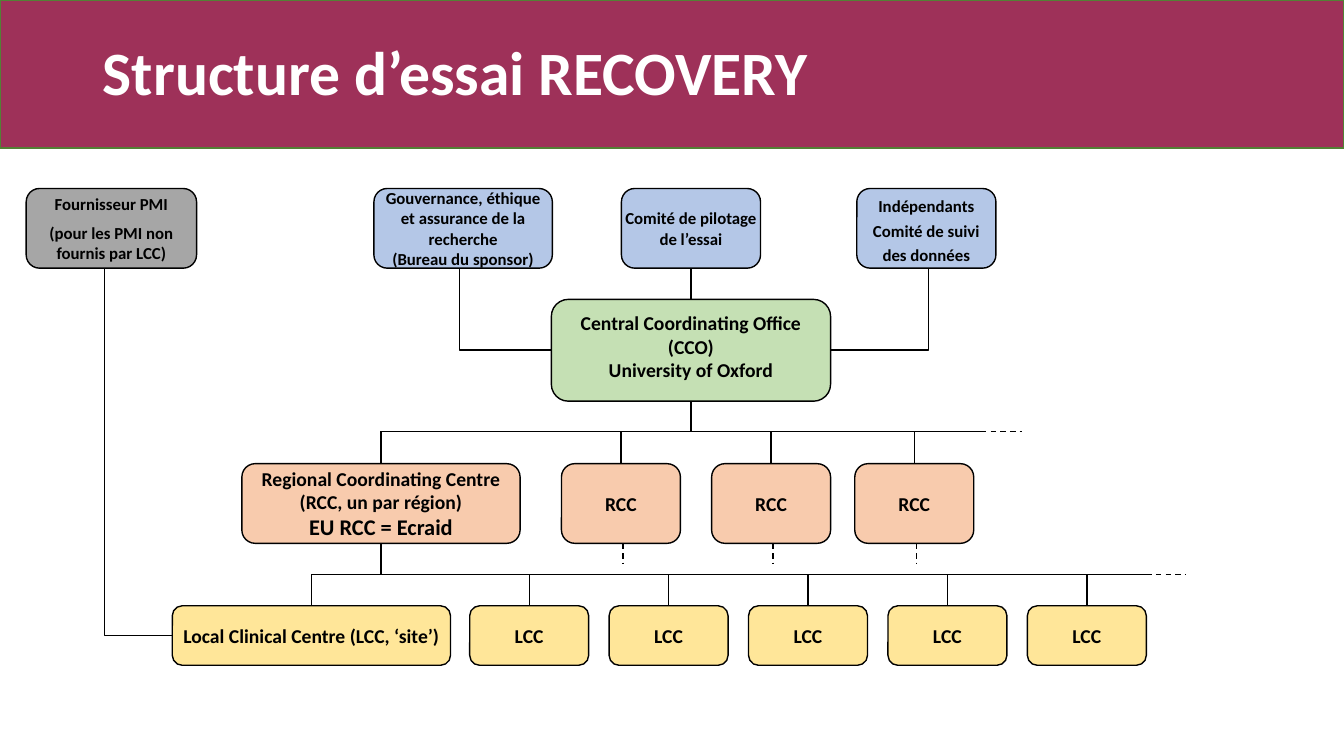
from lxml.etree import SubElement
from pptx import Presentation
from pptx.dml.color import RGBColor
from pptx.enum.dml import MSO_LINE
from pptx.enum.shapes import MSO_CONNECTOR as CONNECTOR, MSO_SHAPE as SHAPE
from pptx.enum.text import MSO_ANCHOR as ANCHOR, PP_ALIGN as ALIGN
from pptx.oxml.ns import qn
from pptx.util import Inches, Pt

COLORS = {name: RGBColor.from_string(value) for name, value in {
    "band": "9E3159", "band_edge": "538035", "committee": "B4C7E7",
    "central": "C5E0B4", "regional": "F8CBAD", "local": "FFE699",
    "supplier": "A6A6A6", "ink": "000000", "title": "FFFFFF",
}.items()}
FONT = "Calibri"
COLS, ROWS = 133.33, 75  # grid cells of a tenth of an inch


def cells(*counts):
    return [Inches(count / 10) for count in counts]


def style_text(paragraph, size, color):
    for run in paragraph.runs:
        run.font.name, run.font.size, run.font.bold = FONT, Pt(size), True
        run.font.color.rgb = COLORS[color]


def add_panel(slide, box, preset, fill, edge):
    panel = slide.shapes.add_shape(preset, *cells(*box))
    panel.shadow.inherit = False
    panel.fill.solid()
    panel.fill.fore_color.rgb = COLORS[fill]
    panel.line.color.rgb = COLORS[edge]
    panel.line.width = Pt(1)
    return panel


def add_unit(slide, box, fill, text, size):
    """Rounded box for one organisational unit; returns its text frame."""
    frame = add_panel(slide, box, SHAPE.ROUNDED_RECTANGLE, fill, "ink").text_frame
    frame.margin_left = frame.margin_right = frame.margin_top = frame.margin_bottom = 0
    frame.word_wrap = True
    frame.vertical_anchor = ANCHOR.MIDDLE
    frame.text = text
    for paragraph in frame.paragraphs:
        paragraph.alignment = ALIGN.CENTER
        style_text(paragraph, size, "ink")
    return frame


def add_link(slide, start, end, dashed=False, elbow=False):
    """Straight link, or an elbow that leaves its start horizontally."""
    link = slide.shapes.add_connector(
        CONNECTOR.ELBOW if elbow else CONNECTOR.STRAIGHT, *cells(*start, *end))
    properties = link.element.spPr
    if elbow:
        properties.find(qn("a:prstGeom")).set("prst", "bentConnector2")
    link.line.color.rgb = COLORS["ink"]
    link.line.width = Pt(1)
    if dashed:
        link.line.dash_style = MSO_LINE.DASH
    SubElement(properties, qn("a:effectLst"))


def add_header(slide, box):
    left, top, width, height = box
    band = add_panel(slide, box, SHAPE.RECTANGLE, "band", "band_edge")
    slide.shapes.element.insert(2, band.element)  # behind the title
    title = slide.shapes.title
    title.left, title.top, title.width, title.height = cells(
        left + 9.2, top + 0.2, width - 18.33, height - 0.2)
    frame = title.text_frame
    frame.text = "Structure d’essai RECOVERY"
    frame.vertical_anchor = ANCHOR.MIDDLE
    heading = frame.paragraphs[0]
    heading.alignment = ALIGN.LEFT
    heading.line_spacing = 0.9
    style_text(heading, 44, "title")


def add_oversight(slide, box, office):
    """Committees along the top of the box, linked to the central office."""
    left, top, width, height = box
    office_left, office_top, office_width, office_height = office
    middle = office_top + office_height / 2
    bottom = top + height
    governance, steering, monitoring = 17.7, 13.8, 13.8

    add_unit(slide, (left, top, governance, height), "committee",
             "Gouvernance, éthique et assurance de la recherche\n(Bureau du sponsor)", 12)
    add_link(slide, (office_left, middle), (left + 8.5, bottom), elbow=True)

    center = office_left + office_width / 2
    add_unit(slide, (center - steering / 2, top, steering, height), "committee",
             "Comité de pilotage de l’essai", 12)
    add_link(slide, (center, bottom), (center, office_top))

    right = left + width
    frame = add_unit(slide, (right - monitoring, top, monitoring, height), "committee",
                     "Indépendants\nComité de suivi des données", 12)
    frame.margin_top = Inches(0.04)
    frame.paragraphs[1].line_spacing = 1.2
    add_link(slide, (office_left + office_width, middle),
             (right - monitoring / 2 + 0.2, bottom), elbow=True)

    frame = add_unit(slide, office, "central",
                     "Central Coordinating Office (CCO)\nUniversity of Oxford", 14)
    frame.margin_bottom = Inches(0.08)


def add_tier(slide, box, fill, units, size, bus, parent):
    """Row of units hung from a bus line, itself hung from its parent.

    units: (offset, width, text); bus: (y, end of solid, end of dashes);
    parent: (x, y).
    """
    left, top, _, height = box
    bus_y, solid_end, dash_end = bus
    frames = []
    for offset, width, text in units:
        center = left + offset + width / 2
        add_link(slide, (center, bus_y), (center, top))
        frames.append(add_unit(slide, (left + offset, top, width, height), fill, text, size))
    bus_start = left + units[0][0] + units[0][1] / 2
    add_link(slide, (bus_start, bus_y), (solid_end, bus_y))
    add_link(slide, (solid_end, bus_y), (dash_end, bus_y), dashed=True)
    add_link(slide, parent, (parent[0], bus_y))
    return frames


def add_regional_tier(slide, box, parent):
    left, top, width, height = box
    units = [(0, 27.6, "Regional Coordinating Centre\n(RCC, un par région)\nEU RCC = Ecraid")]
    units += [(offset, 11.8, "RCC") for offset in (31.7, 46.6, 60.8)]
    frames = add_tier(slide, box, "regional", units, 14, (42.8, left + width, 101.4), parent)
    style_text(frames[0].paragraphs[2], 16, "ink")
    # Dashed stubs towards the other regions' sites
    for offset, unit_width, _ in units[1:]:
        stub = left + offset + unit_width / 2 + 0.2
        add_link(slide, (stub, top + height), (stub, top + height + 2), dashed=True)


def add_local_tier(slide, box, parent):
    left, _, width, _ = box
    units = [(0, 27.6, "Local Clinical Centre (LCC, ‘site’)")]
    units += [(29.5 + 13.83 * i, 11.8, "LCC") for i in range(5)]
    right = left + width
    add_tier(slide, box, "local", units, 14, (57, right, right + 3.9), parent)


def add_supplier(slide, box, site):
    left, top, width, height = box
    frame = add_unit(slide, box, "supplier",
                     "Fournisseur PMI\n(pour les PMI non\nfournis par LCC)", 12)
    frame.paragraphs[1].space_before = Pt(6)
    add_link(slide, site, (left + width / 2 - 0.7, top + height), elbow=True)


def main():
    deck = Presentation()
    deck.slide_width, deck.slide_height = cells(COLS, ROWS)
    slide = deck.slides.add_slide(deck.slide_layouts[5])

    office = (54.7, 29.7, 27.7, 10.1)
    regional = (24, 46, 73.3, 7.9)
    local = (17.1, 60.1, 96.6, 5.9)

    add_header(slide, (0, 0, COLS, 14.7))
    add_oversight(slide, (37.1, 18.7, 61.7, 7.9), office)
    add_regional_tier(slide, regional, (office[0] + office[2] / 2, office[1] + office[3]))
    add_local_tier(slide, local, (regional[0] + 13.8, regional[1] + regional[3]))
    add_supplier(slide, (2.6, 18.7, 16.9, 7.9), (local[0], local[1] + local[3] / 2))

    deck.save("out.pptx")


if __name__ == "__main__":
    main()
